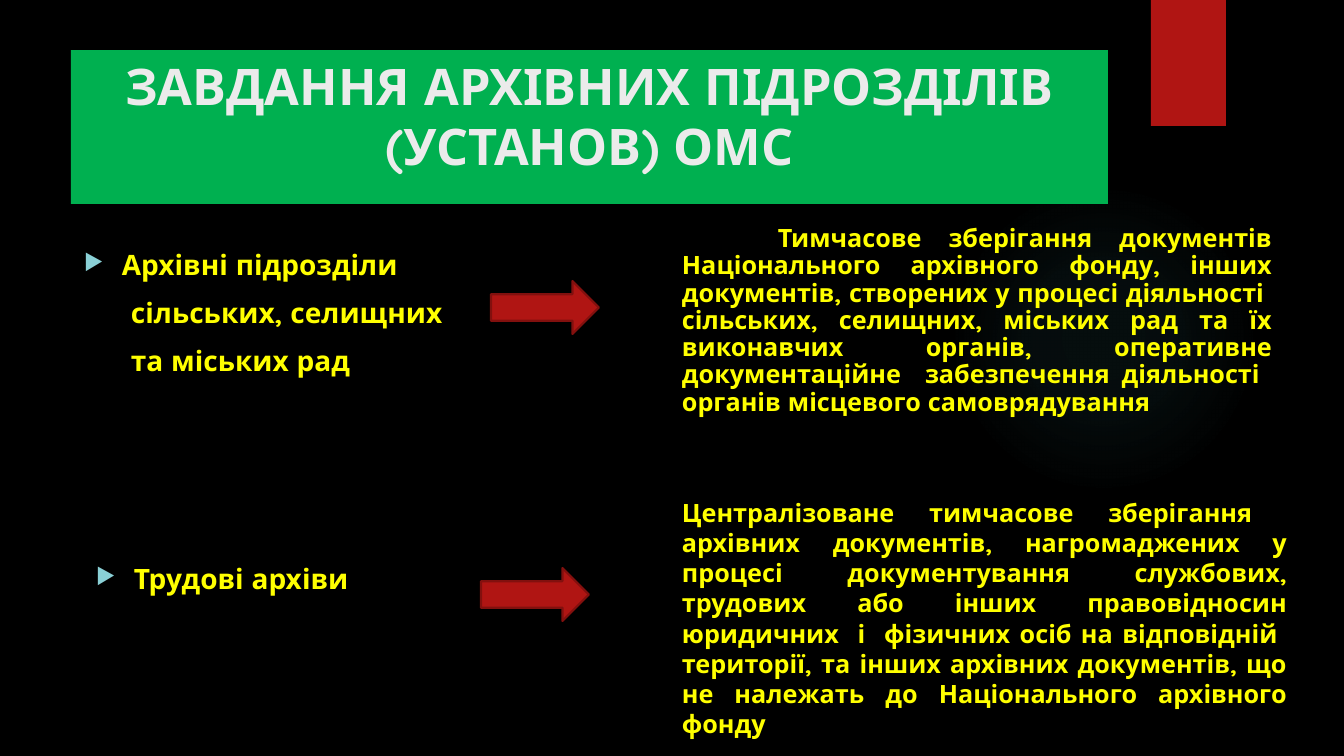
"""Build the slide on the tasks of local archive departments."""
from lxml import etree
from pptx import Presentation
from pptx.dml.color import RGBColor
from pptx.enum.shapes import MSO_SHAPE
from pptx.enum.text import MSO_ANCHOR, PP_ALIGN
from pptx.oxml import parse_xml
from pptx.oxml.ns import qn
from pptx.util import Emu, Pt

RECTANGLE, OVAL, ARROW = MSO_SHAPE.RECTANGLE, MSO_SHAPE.OVAL, MSO_SHAPE.RIGHT_ARROW
LEFT, CENTER, JUSTIFY = PP_ALIGN.LEFT, PP_ALIGN.CENTER, PP_ALIGN.JUSTIFY
TOP = MSO_ANCHOR.TOP
BLACK = RGBColor(0x00, 0x00, 0x00)
RED = RGBColor(0xB0, 0x15, 0x13)
DARK_RED = RGBColor(0x82, 0x10, 0x0E)
GREEN = RGBColor(0x00, 0xB0, 0x50)
PALE = RGBColor(0xEB, 0xEB, 0xEB)
YELLOW = RGBColor(0xFF, 0xFF, 0x00)
BULLET = RGBColor(0x8A, 0xD0, 0xD6)
GLOW = RGBColor(0x50, 0xB9, 0xC1)
FONT = "Quicksand"
PX = 914400 / 100.8
DRAWING = "http://schemas.openxmlformats.org/drawingml/2006/main"


def add_block(kind, box, color):
    shape = slide.shapes.add_shape(kind, *[Emu(round(n * PX)) for n in box])
    shape.shadow.inherit = False
    shape.fill.solid()
    shape.fill.fore_color.rgb = color
    shape.line.fill.background()
    return shape


def write(paragraph, text, size, color, align, margin=0, indent=0):
    paragraph.alignment = align
    properties = paragraph._p.get_or_add_pPr()
    properties.set("marL", str(round(margin * PX)))
    properties.set("indent", str(round(indent * PX)))
    run = paragraph.add_run()
    run.text = text
    run.font.name = FONT
    run.font.size = Pt(size)
    run.font.bold = True
    run.font.color.rgb = color


presentation = Presentation()
presentation.slide_width = Emu(round(1344 * PX))
presentation.slide_height = Emu(round(756 * PX))
slide = presentation.slides.add_slide(presentation.slide_layouts[6])
slide.background.fill.solid()
slide.background.fill.fore_color.rgb = BLACK

glow = add_block(OVAL, (949, 184, 310, 310), GLOW)
stops = "".join(
    f'<a:gs pos="{position}000"><a:srgbClr val="{GLOW}"><a:alpha val="{alpha}000"/></a:srgbClr></a:gs>'
    for position, alpha in ((0, 7), (36, 6), (69, 0))
)
gradient = parse_xml(
    f'<a:gradFill xmlns:a="{DRAWING}"><a:gsLst>{stops}</a:gsLst><a:path path="circle">'
    '<a:fillToRect l="50000" t="50000" r="50000" b="50000"/></a:path></a:gradFill>'
)
solid = glow._element.spPr.find(qn("a:solidFill"))
solid.getparent().replace(solid, gradient)

add_block(RECTANGLE, (1151, 0, 75, 126), RED)

for left, top in ((491, 281), (481, 568)):
    arrow = add_block(ARROW, (left, top, 108, 53), RED)
    arrow.line.color.rgb = DARK_RED
    arrow.line.width = Pt(1.5)

title = add_block(RECTANGLE, (71, 50, 1037, 154), GREEN)
title.text_frame.vertical_anchor = TOP
write(title.text_frame.paragraphs[0], "ЗАВДАННЯ АРХІВНИХ ПІДРОЗДІЛІВ (УСТАНОВ) ОМС", 36, PALE, CENTER)

TASK_LOCAL = (
    "Тимчасове зберігання документів Національного архівного фонду, інших документів, "
    "створених у процесі діяльності  сільських, селищних, міських рад та їх виконавчих органів, "
    "оперативне документаційне  забезпечення діяльності  органів місцевого самоврядування"
)
TASK_LABOUR = (
    "Централізоване тимчасове зберігання  архівних документів, нагромаджених у процесі "
    "документування службових, трудових або інших правовідносин юридичних  і  фізичних осіб "
    "на відповідній  території, та інших архівних документів, що не належать до "
    "Національного архівного фонду"
)
text_boxes = [
    ((634, 221, 648, 187), 18, JUSTIFY, 0.9, [(TASK_LOCAL, 38, 96)]),
    ((74, 243, 581, 169), 20, LEFT, 1, [
        ("Архівні підрозділи", 38, -38),
        ("сільських, селищних", 47, 0),
        ("та міських рад", 47, 0),
    ]),
    ((86, 557, 581, 74), 20, LEFT, 1, [("Трудові архіви", 38, -38)]),
    ((672, 492, 625, 224), 18, JUSTIFY, 1, [(TASK_LABOUR, 0, 0)]),
]
for box, size, align, spacing, lines in text_boxes:
    frame = slide.shapes.add_textbox(*[Emu(round(n * PX)) for n in box]).text_frame
    frame.word_wrap = True
    for number, (text, margin, indent) in enumerate(lines):
        paragraph = frame.add_paragraph() if number else frame.paragraphs[0]
        paragraph.line_spacing = float(spacing)
        if number:
            paragraph.space_before = Pt(10)
        if indent < 0:
            properties = paragraph._p.get_or_add_pPr()
            bullet_color = etree.SubElement(properties, qn("a:buClr"))
            etree.SubElement(bullet_color, qn("a:srgbClr"), val=str(BULLET))
            etree.SubElement(properties, qn("a:buSzPct"), val="80000")
            etree.SubElement(properties, qn("a:buChar"), char="▶")
        write(paragraph, text, size, YELLOW, align, margin, indent)

presentation.save("out.pptx")
